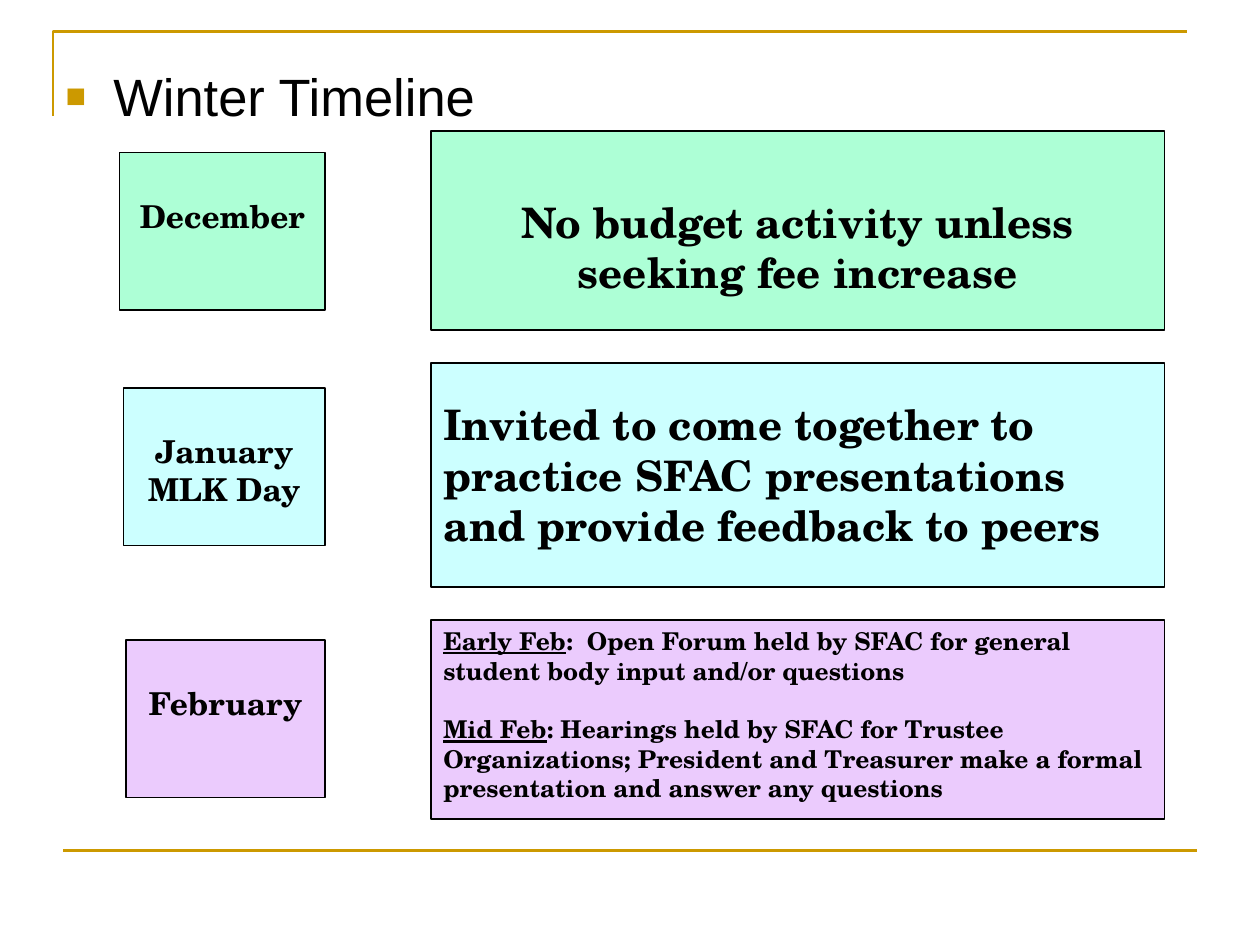
"""Build the Winter Timeline slide."""
from lxml import etree
from pptx import Presentation
from pptx.dml.color import RGBColor
from pptx.enum.shapes import MSO_CONNECTOR, MSO_SHAPE
from pptx.enum.text import MSO_ANCHOR, MSO_AUTO_SIZE, PP_ALIGN
from pptx.oxml.ns import qn
from pptx.util import Inches, Pt

RECT = MSO_SHAPE.RECTANGLE
STRAIGHT = MSO_CONNECTOR.STRAIGHT
TOP = MSO_ANCHOR.TOP
FIXED = MSO_AUTO_SIZE.NONE
LEFT, CENTER = PP_ALIGN.LEFT, PP_ALIGN.CENTER

COLORS = {"ink": "000000", "gold": "CC9900", "mint": "ADFFD6",
          "aqua": "CCFFFF", "lilac": "EBCBFD"}
SERIF, SANS = "TeX Gyre Schola", "Arial"
LEAD = 1.2


def tint(name):
    """Return the named colour."""
    return RGBColor.from_string(COLORS[name])


def put(item, **values):
    """Set attributes from format values."""
    for name, value in values.items():
        setattr(item, name, value)


class Deck:
    """Hold the style and the current slide."""

    def __init__(self):
        """Open a deck with one title-only slide."""
        self.deck = Presentation()
        put(self.deck, slide_width=Inches(10), slide_height=Inches(7.5))
        self.slide = self.deck.slides.add_slide(self.deck.slide_layouts[5])
        self.shapes = self.slide.shapes

    def words(self, para, text, size, face=SERIF, bold=True, under=False):
        """Add a styled run to a paragraph."""
        run = para.add_run()
        run.text = text
        put(run.font, size=Pt(size), name=face, bold=bold, underline=under)
        run.font.color.rgb = tint("ink")

    def edge(self, line, color, width):
        """Style an outline."""
        line.color.rgb = tint(color)
        line.width = Pt(width)

    def title(self, text, box):
        """Place the title with a square bullet."""
        shape = self.shapes.title
        put(shape, **dict(zip(("left", "top", "width", "height"),
                              map(Inches, box))))
        frame = shape.text_frame
        put(frame, word_wrap=True, auto_size=FIXED, vertical_anchor=TOP,
            margin_top=Inches(0.09))
        para = frame.paragraphs[0]
        para.alignment = LEFT
        self.words(para, text, 30, SANS, False)
        props = para._p.get_or_add_pPr()
        props.set("marL", str(Inches(0.38)))
        props.set("indent", str(-Inches(0.38)))
        shade = etree.SubElement(props, qn("a:buClr"))
        for parent, tag, key, value in (
                (shade, "a:srgbClr", "val", COLORS["gold"]),
                (props, "a:buSzPct", "val", "65000"),
                (props, "a:buFont", "typeface", SANS),
                (props, "a:buChar", "char", "■")):
            etree.SubElement(parent, qn(tag)).set(key, value)

    def corner(self, *points):
        """Draw an open gold outline."""
        start, *rest = [tuple(map(Inches, point)) for point in points]
        outline = self.shapes.build_freeform(*start)
        outline.add_line_segments(rest, close=False)
        shape = outline.convert_to_shape()
        shape.shadow.inherit = False
        shape.fill.background()
        self.edge(shape.line, "gold", 1.5)

    def rule(self, *ends):
        """Draw a straight gold line."""
        line = self.shapes.add_connector(STRAIGHT, *map(Inches, ends))
        etree.SubElement(line._element.spPr, qn("a:effectLst"))
        self.edge(line.line, "gold", 1.5)

    def card(self, box, color, paras, size, align=CENTER, drop=0, gap=0):
        """Draw a filled card whose text starts drop points down."""
        shape = self.shapes.add_shape(RECT, *map(Inches, box))
        shape.shadow.inherit = False
        shape.fill.solid()
        shape.fill.fore_color.rgb = tint(color)
        self.edge(shape.line, "ink", 0.75)
        frame = shape.text_frame
        put(frame, word_wrap=True, vertical_anchor=TOP,
            margin_top=Inches(0.05) + Pt(drop * LEAD))
        for i, (head, body) in enumerate(paras):
            para = frame.add_paragraph() if i else frame.paragraphs[0]
            put(para, alignment=align, space_before=Pt(gap * LEAD if i else 0))
            if head:
                self.words(para, head, size, under=True)
            self.words(para, body, size)


def main():
    """Build and save the slide."""
    deck = Deck()
    deck.corner((0.42, 0.92), (0.42, 0.25), (9.42, 0.25))
    deck.rule(0.5, 6.75, 9.5, 6.75)
    deck.title("Winter Timeline", (0.42, 0.42, 9, 6.37))

    months = (
        (0.95, 1.21, "mint", ["December"]),
        (0.98, 3.08, "aqua", ["January", "MLK Day"]),
        (1, 5.08, "lilac", ["February"]),
    )
    for left, top, color, names in months:
        deck.card((left, top, 2.58 - left, 1.25), color,
                  [("", name) for name in names], 18, drop=18)

    tasks = (
        (1.04, 1.58, "mint", 24, CENTER, 28,
         [("", "No budget activity unless seeking fee increase")]),
        (2.88, 1.78, "aqua", 24, LEFT, 14,
         [("", "Invited to come together to practice SFAC presentations "
               "and provide feedback to peers")]),
        (4.92, 1.58, "lilac", 14, LEFT, 0,
         [("Early Feb", ":  Open Forum held by SFAC for general student body "
                        "input and/or questions"),
          ("Mid Feb", ": Hearings held by SFAC for Trustee Organizations; "
                      "President and Treasurer make a formal presentation "
                      "and answer any questions")]),
    )
    for top, height, color, size, align, drop, paras in tasks:
        deck.card((3.42, top, 5.82, height), color, paras, size, align,
                  drop, gap=14)
    deck.deck.save("out.pptx")


if __name__ == "__main__":
    main()
